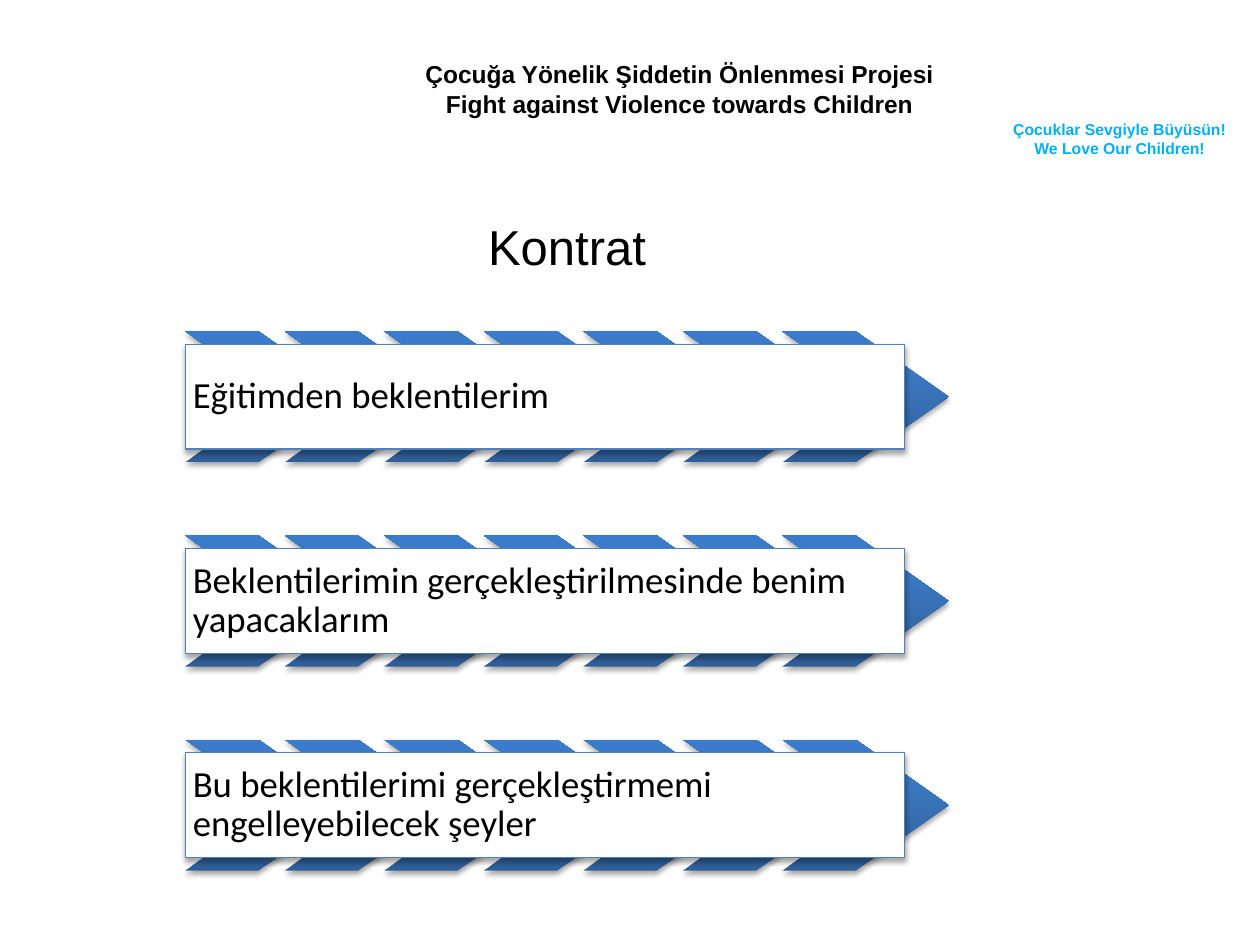
from copy import deepcopy

from pptx import Presentation
from pptx.dml.color import RGBColor
from pptx.enum.shapes import MSO_SHAPE
from pptx.enum.text import MSO_ANCHOR, PP_ALIGN
from pptx.oxml import parse_xml
from pptx.oxml.ns import nsdecls, qn
from pptx.util import Inches, Pt

COLORS = {
    "text": "000000",
    "slogan": "00B0F0",
    "panel": "FFFFFF",
    "outline": "4F81BD",
    "shadow": "000000",
}
CHEVRON_STOPS = [(0, "2F5F99"), (0.8, "3D7CC7"), (1, "3A7CCB")]
CHEVRON_COUNT = 7
CHEVRON_WIDTH = 1.32
CHEVRON_STEP = 0.79
PANEL_WIDTH = 5.71
PANEL_HEIGHT = 0.83
ROW_LEFT, ROW_TOP, ROW_HEIGHT, ROW_STEP = 1.47, 2.63, 1.04, 1.62
EXPECTATIONS = [
    "Eğitimden beklentilerim",
    "Beklentilerimin gerçekleştirilmesinde benim yapacaklarım",
    "Bu beklentilerimi gerçekleştirmemi engelleyebilecek şeyler",
]


def format_paragraph(paragraph, size, font_name, color, bold=False):
    """Set the font of a whole paragraph."""
    font = paragraph.font
    font.size, font.name, font.bold = Pt(size), font_name, bold
    font.color.rgb = RGBColor.from_string(color)


def add_soft_shadow(shape):
    """Give a shape a soft shadow just below it."""
    shape.shadow.inherit = False
    shape._element.spPr.find(qn("a:effectLst")).append(parse_xml(
        f'<a:outerShdw {nsdecls("a")} blurRad="{Pt(3.1)}" dist="{Pt(1.8)}" '
        f'dir="5400000" rotWithShape="0"><a:srgbClr val="{COLORS["shadow"]}">'
        '<a:alpha val="35000"/></a:srgbClr></a:outerShdw>'))


def add_caption(slide, left, top, width, height, lines, size, color):
    """Add centred bold lines of text in a box."""
    box = slide.shapes.add_textbox(
        Inches(left), Inches(top), Inches(width), Inches(height))
    frame = box.text_frame
    frame.word_wrap = False
    frame.text = "\n".join(lines)
    for paragraph in frame.paragraphs:
        paragraph.alignment = PP_ALIGN.CENTER
        format_paragraph(paragraph, size, "Arial", color, bold=True)


def place_title(slide, left, top, width, height, text):
    """Move and format the title placeholder."""
    title = slide.shapes.title
    title.left, title.top = Inches(left), Inches(top)
    title.width, title.height = Inches(width), Inches(height)
    frame = title.text_frame
    frame.text = text
    frame.vertical_anchor = MSO_ANCHOR.MIDDLE
    frame.paragraphs[0].alignment = PP_ALIGN.CENTER
    format_paragraph(frame.paragraphs[0], 28, "Arial", COLORS["text"])


def add_chevron(shapes, left, top, height):
    """Add one chevron, dark at the bottom and light at the top."""
    chevron = shapes.add_shape(
        MSO_SHAPE.CHEVRON, Inches(left), Inches(top),
        Inches(CHEVRON_WIDTH), Inches(height))
    chevron.adjustments[0] = 0.71
    chevron.fill.gradient()
    chevron.fill.gradient_angle = 90
    stop_list = chevron._element.spPr.find(qn("a:gradFill")).find(qn("a:gsLst"))
    stop_list.append(deepcopy(stop_list[-1]))
    for stop, (position, color) in zip(chevron.fill.gradient_stops, CHEVRON_STOPS):
        stop.position = position
        stop.color.rgb = RGBColor.from_string(color)
    chevron.line.fill.background()
    add_soft_shadow(chevron)


def add_panel(shapes, left, top, text):
    """Add the white panel that carries the text of a row."""
    panel = shapes.add_shape(
        MSO_SHAPE.RECTANGLE, Inches(left), Inches(top),
        Inches(PANEL_WIDTH), Inches(PANEL_HEIGHT))
    panel.fill.solid()
    panel.fill.fore_color.rgb = RGBColor.from_string(COLORS["panel"])
    panel.line.color.rgb = RGBColor.from_string(COLORS["outline"])
    panel.line.width = Pt(0.75)
    add_soft_shadow(panel)
    frame = panel.text_frame
    frame.word_wrap = True
    frame.vertical_anchor = MSO_ANCHOR.MIDDLE
    frame.margin_left = frame.margin_right = Inches(0.06)
    frame.margin_top = frame.margin_bottom = Inches(0.06)
    frame.text = text
    paragraph = frame.paragraphs[0]
    paragraph.alignment = PP_ALIGN.LEFT
    paragraph.line_spacing = 0.9
    format_paragraph(paragraph, 21, "Calibri", COLORS["text"])


def add_chevron_row(slide, left, top, height, text):
    """Add a group of chevrons with a text panel over them."""
    shapes = slide.shapes.add_group_shape().shapes
    for index in range(CHEVRON_COUNT):
        add_chevron(shapes, left + index * CHEVRON_STEP, top, height)
    add_panel(shapes, left, top + (height - PANEL_HEIGHT) / 2, text)


def main():
    """Build and save the slide."""
    presentation = Presentation()
    presentation.slide_width = Inches(10)
    presentation.slide_height = Inches(7.5)
    slide = presentation.slides.add_slide(presentation.slide_layouts[5])
    add_caption(slide, 3.27, 0.42, 4.25, 0.57,
                ["Çocuğa Yönelik Şiddetin Önlenmesi Projesi",
                 "Fight against Violence towards Children"], 14, COLORS["text"])
    add_caption(slide, 7.93, 0.9, 1.91, 0.4,
                ["Çocuklar Sevgiyle Büyüsün!", "We Love Our Children!"],
                9, COLORS["slogan"])
    place_title(slide, 0, 1.33, 9, 1.25, "Kontrat")
    for index, text in enumerate(EXPECTATIONS):
        add_chevron_row(slide, ROW_LEFT, ROW_TOP + index * ROW_STEP, ROW_HEIGHT, text)
    presentation.save("out.pptx")


if __name__ == "__main__":
    main()
